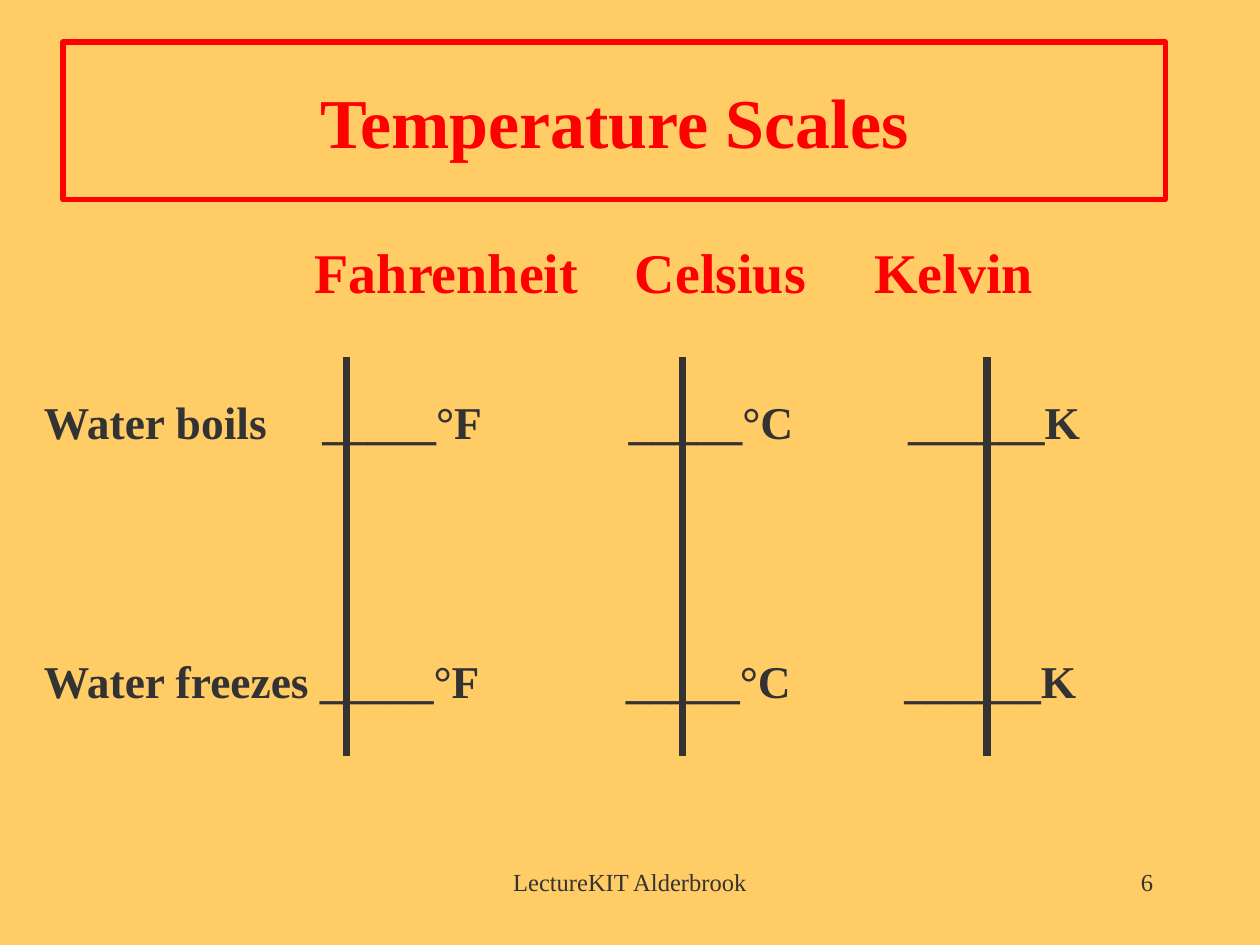
from lxml import etree
from pptx import Presentation
from pptx.dml.color import RGBColor
from pptx.enum.shapes import MSO_CONNECTOR, MSO_SHAPE
from pptx.enum.text import MSO_ANCHOR, PP_ALIGN
from pptx.oxml.ns import qn
from pptx.util import Inches, Pt

SAND = RGBColor(0xFF, 0xCC, 0x66)
RED = RGBColor(0xFF, 0x00, 0x00)
DARK = RGBColor(0x33, 0x33, 0x33)
LEFT, CENTER, RIGHT = PP_ALIGN.LEFT, PP_ALIGN.CENTER, PP_ALIGN.RIGHT
TOP, MIDDLE = MSO_ANCHOR.TOP, MSO_ANCHOR.MIDDLE
RECT, STRAIGHT = MSO_SHAPE.RECTANGLE, MSO_CONNECTOR.STRAIGHT

FONT = "Times New Roman"
COLS, ROWS = 120, 90


class SlideBuilder:
    def __init__(self, prs):
        self.s = prs.slides.add_slide(prs.slide_layouts[6])
        self.col = prs.slide_width / COLS
        self.row = prs.slide_height / ROWS
        fill = self.s.background.fill
        fill.solid()
        fill.fore_color.rgb = SAND

    def place(self, x, y, w, h):
        return (int(x * self.col), int(y * self.row),
                int(w * self.col), int(h * self.row))

    def prepare(self, sp, anchor):
        tf = sp.text_frame
        tf.word_wrap = True
        tf.vertical_anchor = anchor
        return tf

    def add_text(self, p, text, size, color, bold=False, align=LEFT):
        p.alignment = align
        r = p.add_run()
        r.text = text
        r.font.name = FONT
        r.font.size = Pt(size)
        r.font.bold = bold
        r.font.color.rgb = color

    def title(self, box, text):
        sp = self.s.shapes.add_shape(RECT, *self.place(*box))
        sp.shadow.inherit = False
        sp.fill.background()
        sp.line.color.rgb = RED
        sp.line.width = Pt(3)
        tf = self.prepare(sp, MIDDLE)
        self.add_text(tf.paragraphs[0], text, 40, RED, True, CENTER)

    def label(self, box, text, align):
        sp = self.s.shapes.add_textbox(*self.place(*box))
        tf = self.prepare(sp, TOP)
        self.add_text(tf.paragraphs[0], text, 14, DARK, False, align)

    def tabbed_rows(self, box, rows):
        sp = self.s.shapes.add_textbox(*self.place(*box))
        tf = self.prepare(sp, TOP)
        for i, (cells, tabs, size, color, before) in enumerate(rows):
            p = tf.add_paragraph() if i else tf.paragraphs[0]
            p.space_before = Pt(before)
            self.add_text(p, "\t".join(cells), size, color, True)
            self.tab_stops(p, tabs)

    def tab_stops(self, p, tabs):
        tab_list = etree.SubElement(p._p.get_or_add_pPr(), qn("a:tabLst"))
        for tab in tabs:
            etree.SubElement(tab_list, qn("a:tab"),
                             pos=str(Inches(tab)), algn="l")

    def scale(self, x, top, bottom):
        x1, y1, x2, y2 = self.place(x, top, x, bottom)
        line = self.s.shapes.add_connector(STRAIGHT, x1, y1, x2, y2)
        line.line.color.rgb = DARK
        line.line.width = Pt(4.5)
        etree.SubElement(line._element.spPr, qn("a:effectLst"))


def main():
    prs = Presentation()
    prs.slide_width, prs.slide_height = Inches(10), Inches(7.5)
    slide = SlideBuilder(prs)

    slide.label((41, 82, 38, 6), "LectureKIT Alderbrook", CENTER)
    slide.label((86, 82, 25, 6), "6", RIGHT)
    slide.title((6, 4, 105, 15), "Temperature Scales")

    blanks = ["_____°F", "_____°C", "______K"]
    slide.tabbed_rows((3, 22, 114, 60), [
        (["", "Fahrenheit", "Celsius", "Kelvin"],
         (2.15, 4.69, 6.59), 32, RED, 6),
        (["Water boils"] + blanks, (2.21, 4.64, 6.86), 26, DARK, 51),
        (["Water freezes"] + blanks, (2.19, 4.62, 6.83), 26, DARK, 117),
    ])
    for x in (33, 65, 94):
        slide.scale(x, 34, 72)

    prs.save("out.pptx")


if __name__ == "__main__":
    main()
